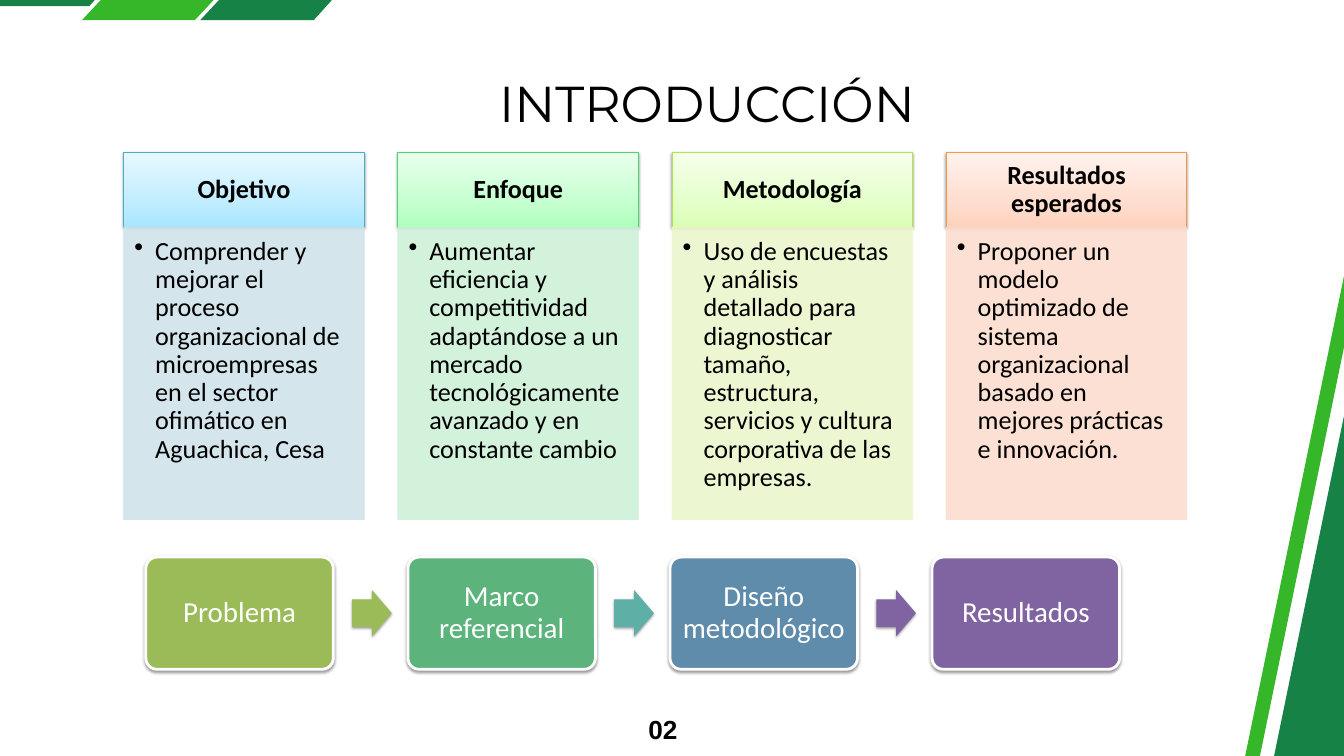
import copy

import lxml.etree
import pptx
import pptx.dml.color
import pptx.enum.shapes
import pptx.enum.text
import pptx.oxml
import pptx.oxml.ns
import pptx.util

Inches = pptx.util.Inches
Pt = pptx.util.Pt
qn = pptx.oxml.ns.qn
Shapes = pptx.enum.shapes.MSO_SHAPE
Align = pptx.enum.text.PP_ALIGN
Anchor = pptx.enum.text.MSO_ANCHOR


def color(value):
    return pptx.dml.color.RGBColor.from_string(value)


def write(shape, text, size, font, ink, align, anchor, margins, spacing, bold=False):
    frame = shape.text_frame
    frame.word_wrap = True
    frame.vertical_anchor = anchor
    frame.margin_left, frame.margin_top, frame.margin_right, frame.margin_bottom = map(Inches, margins)
    frame.text = text
    paragraph = frame.paragraphs[0]
    paragraph.alignment = align
    paragraph.line_spacing = spacing
    run = paragraph.runs[0]
    run.font.size = Pt(size)
    run.font.name = font
    run.font.bold = bold
    run.font.color.rgb = color(ink)
    return paragraph


presentation = pptx.Presentation()
presentation.slide_width = Inches(20)
presentation.slide_height = Inches(11.25)
slide = presentation.slides.add_slide(presentation.slide_layouts[6])
shapes = slide.shapes

DARK_GREEN, LIGHT_GREEN = "168246", "35B729"
stripes = [
    (DARK_GREEN, [(0, 0), (1.41, 0), (1.33, 0.09), (0, 0.09)]),
    (LIGHT_GREEN, [(1.5, 0), (3.18, 0), (2.9, 0.3), (1.22, 0.3)]),
    (DARK_GREEN, [(3.26, 0), (4.94, 0), (4.67, 0.3), (2.98, 0.3)]),
    (DARK_GREEN, [(20, 6.19), (20, 11.25), (18.96, 11.25)]),
    (LIGHT_GREEN, [(20, 4.11), (20, 5.17), (18.75, 11.25), (18.53, 11.25)]),
]
for fill, points in stripes:
    corners = [(Inches(x), Inches(y)) for x, y in points]
    builder = shapes.build_freeform(*corners[0])
    builder.add_line_segments(corners[1:], close=True)
    stripe = builder.convert_to_shape()
    stripe.shadow.inherit = False
    stripe.fill.solid()
    stripe.fill.fore_color.rgb = color(fill)
    stripe.line.fill.background()

title = shapes.add_textbox(Inches(5.33), Inches(0.45), Inches(10.38), Inches(1.36))
write(title, "INTRODUCCIÓN", 54, "Montserrat", "000000", Align.CENTER, Anchor.TOP, (0, 0, 0, 0), Pt(110))
page_number = shapes.add_textbox(Inches(9.52), Inches(10.54), Inches(0.56), Inches(0.5))
write(page_number, "02", 28, "Arial", "000000", Align.RIGHT, Anchor.TOP, (0, 0, 0, 0), Pt(39.2), True)

raised = []
columns = [
    ("Objetivo", ("A7E6FF", "C1EDFF", "E7F8FF"), "4BACC6", "D0E3EA",
     "Comprender y mejorar el proceso organizacional de microempresas en el sector ofimático en Aguachica, Cesa"),
    ("Enfoque", ("AFFFBD", "C6FFD0", "E9FFED"), "47D872", "CFF1D9",
     "Aumentar eficiencia y competitividad adaptándose a un mercado tecnológicamente avanzado y en constante cambio"),
    ("Metodología", ("DBFFB6", "E5FFCB", "F5FFEB"), "ACE946", "EBF7CE",
     "Uso de encuestas y análisis detallado para diagnosticar tamaño, estructura, servicios y cultura "
     "corporativa de las empresas."),
    ("Resultados esperados", ("FFD2BD", "FFDED0", "FFF2ED"), "F79646", "FCDDCF",
     "Proponer un modelo optimizado de sistema organizacional basado en mejores prácticas e innovación."),
]
for i, (heading, gradient, border, tint, description) in enumerate(columns):
    left = Inches(1.84 + 4.08 * i)
    header = shapes.add_shape(Shapes.RECTANGLE, left, Inches(2.27), Inches(3.58), Inches(1.11))
    header.fill.gradient()
    header.fill.gradient_angle = 90
    stop_list = header._element.spPr.find(".//" + qn("a:gsLst"))
    stop_list.append(copy.deepcopy(stop_list[0]))
    for stop, position, shade in zip(header.fill.gradient_stops, (0, 0.35, 1), gradient):
        stop.position = position
        stop.color.rgb = color(shade)
    header.line.color.rgb = color(border)
    header.line.width = Pt(0.75)
    write(header, heading, 28, "Calibri", "000000", Align.CENTER, Anchor.MIDDLE,
          (0.22, 0.12, 0.22, 0.12), 0.9, True)
    raised.append(header)

    body = shapes.add_shape(Shapes.RECTANGLE, left, Inches(3.38), Inches(3.58), Inches(4.35))
    body.shadow.inherit = False
    body.fill.solid()
    body.fill.fore_color.rgb = color(tint)
    body.line.color.rgb = color(tint)
    body.line.width = Pt(0.75)
    for paint in body._element.spPr.iter(qn("a:srgbClr")):
        lxml.etree.SubElement(paint, qn("a:alpha"), val="90000")
    bullet = write(body, description, 28, "Calibri", "000000", Align.LEFT, Anchor.TOP,
                   (0.16, 0.16, 0.22, 0.24), 0.9)
    bullet.level = 1
    properties = bullet._p.get_or_add_pPr()
    properties.set("marL", str(Inches(0.31)))
    properties.set("indent", str(Inches(-0.31)))
    lxml.etree.SubElement(properties, qn("a:buChar"), char="•")

steps = [
    ("Problema", "9BBB59", "9BBB59"),
    ("Marco referencial", "5CB37C", "5EAFA6"),
    ("Diseño metodológico", "608CAB", "8064A2"),
    ("Resultados", "8064A2", None),
]
for i, (name, fill, arrow_fill) in enumerate(steps):
    left = 2.17 + 3.9 * i
    step = shapes.add_shape(Shapes.ROUNDED_RECTANGLE, Inches(left), Inches(8.29), Inches(2.79), Inches(1.67))
    step.adjustments[0] = 0.1
    step.fill.solid()
    step.fill.fore_color.rgb = color(fill)
    step.line.color.rgb = color("FFFFFF")
    step.line.width = Pt(3)
    write(step, name, 31, "Calibri", "FFFFFF", Align.CENTER, Anchor.MIDDLE, (0.13, 0.13, 0.13, 0.13), 0.9)
    raised.append(step)
    if arrow_fill:
        arrow = shapes.add_shape(Shapes.RIGHT_ARROW, Inches(left + 3.07), Inches(8.78), Inches(0.59), Inches(0.69))
        arrow.adjustments[0] = 0.6
        arrow.adjustments[1] = 0.5
        arrow.fill.solid()
        arrow.fill.fore_color.rgb = color(arrow_fill)
        arrow.line.fill.background()
        raised.append(arrow)

for shape in raised:
    shape.shadow.inherit = False
    effects = shape._element.spPr.find(qn("a:effectLst"))
    shadow = lxml.etree.SubElement(effects, qn("a:outerShdw"), blurRad=str(Pt(3.1)), dist=str(Pt(1.6)),
                                   dir="5400000", rotWithShape="0")
    shadow_color = lxml.etree.SubElement(shadow, qn("a:srgbClr"), val="000000")
    lxml.etree.SubElement(shadow_color, qn("a:alpha"), val="38000")

presentation.save("out.pptx")
